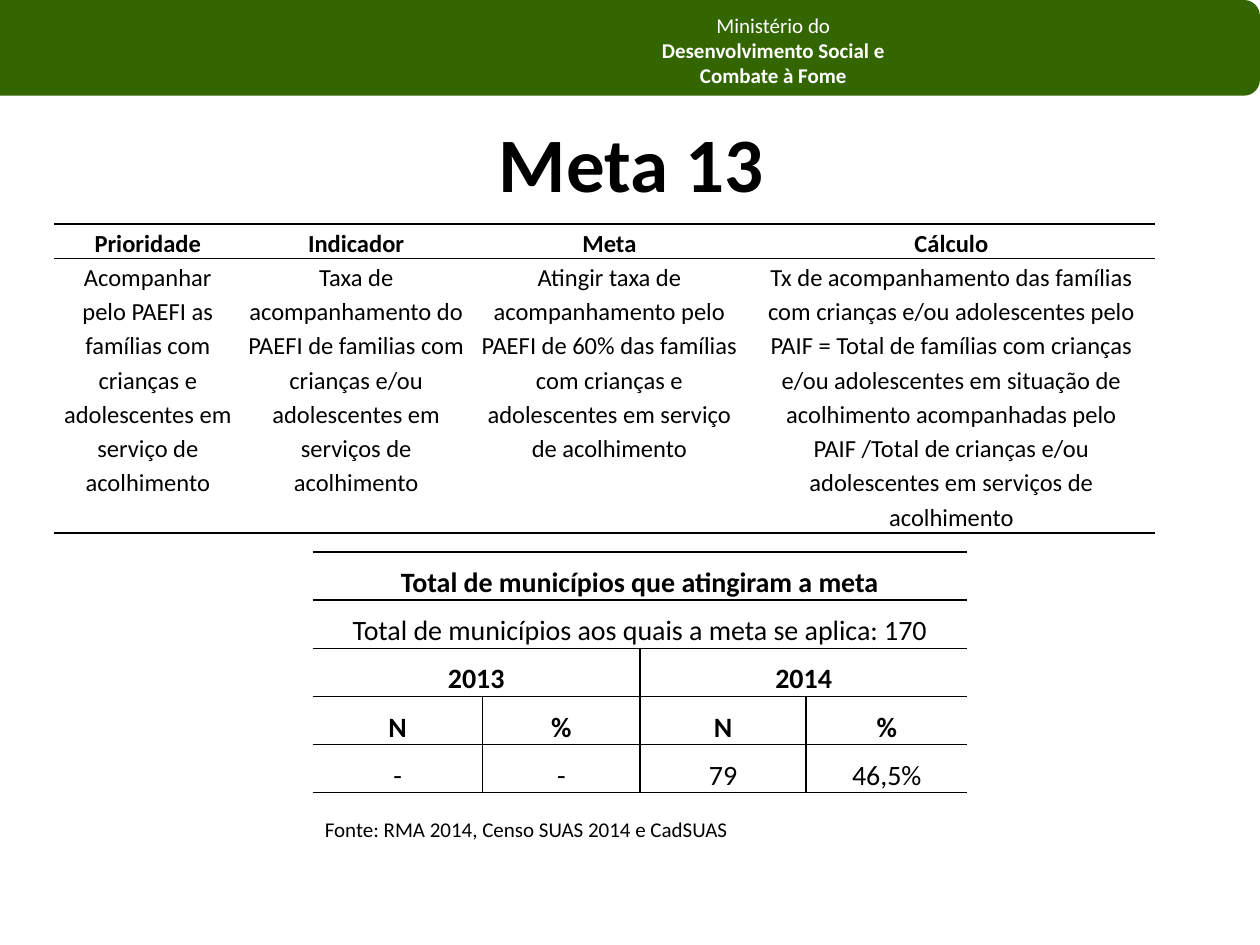
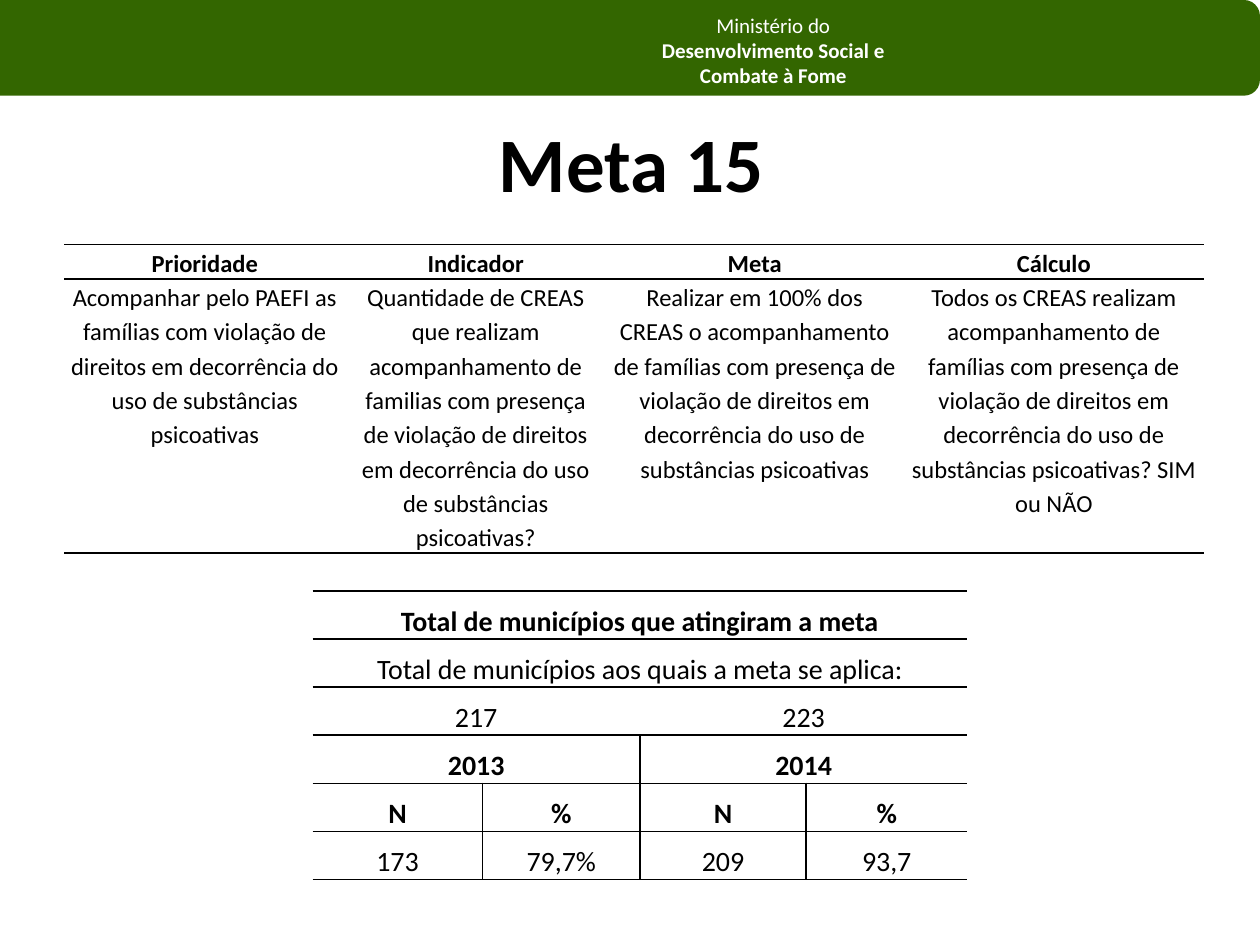
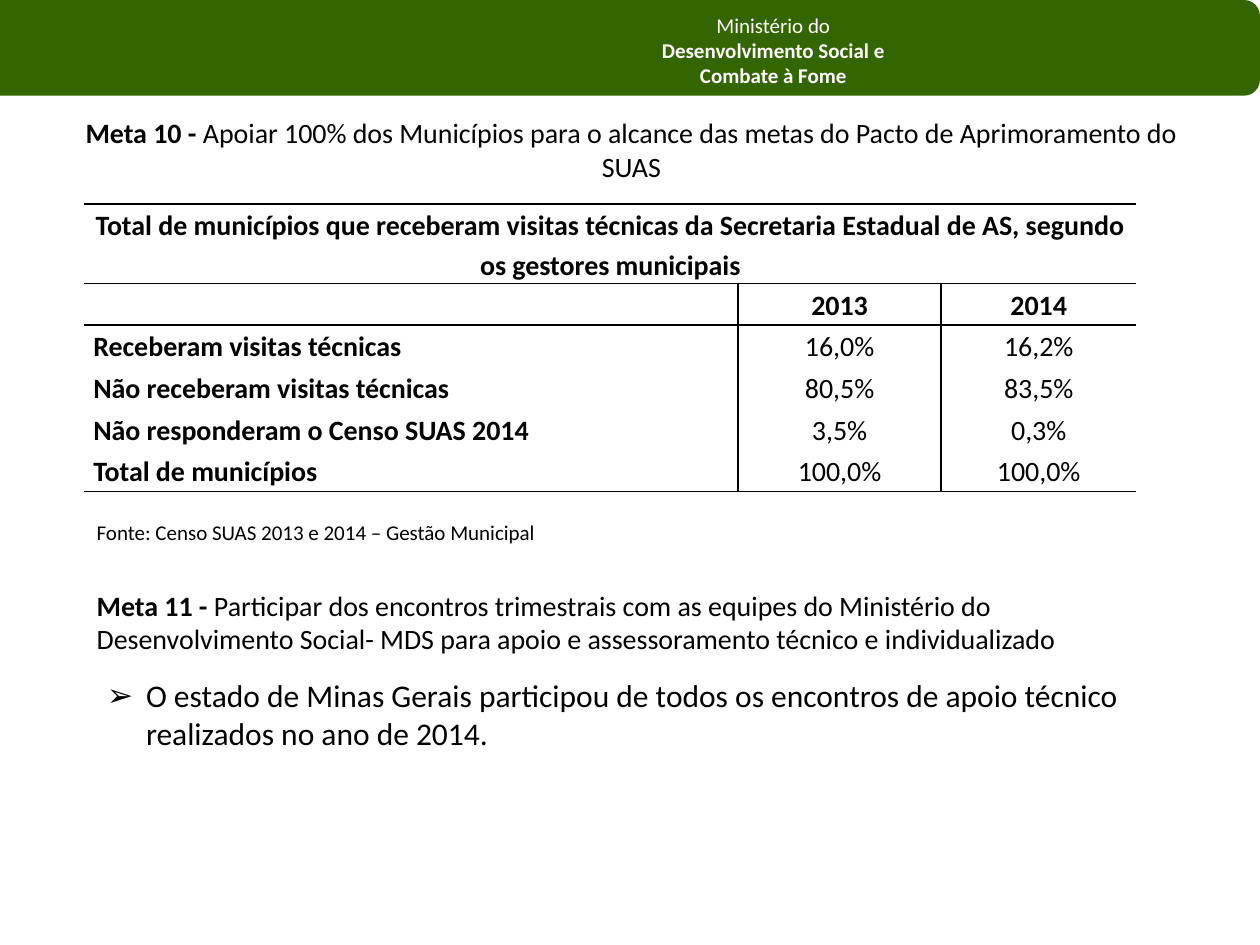
from lxml import etree
from pptx import Presentation
from pptx.dml.color import RGBColor
from pptx.enum import shapes, text
from pptx.oxml import ns
from pptx.util import Cm, Pt

COLORS = {"band": "336600", "ink": "000000", "white": "FFFFFF"}
FONT = "Calibri"
CENTER, LEFT = text.PP_ALIGN.CENTER, text.PP_ALIGN.LEFT
TITLE_ONLY, TITLE_AND_BODY = 5, 1

GOAL_HEADER = ["Prioridade", "Indicador", "Meta", "Cálculo"]
REACHED = ["Total de municípios que atingiram a meta", None, None, None]
YEARS = ["2013", None, "2014", None]
MEASURES = ["N", "%", "N", "%"]


def rgb(name):
    return RGBColor.from_string(COLORS[name])


def format_paragraph(paragraph, size, bold=None, color="ink", align=LEFT):
    paragraph.alignment = align
    font = paragraph.font
    font.name, font.size, font.bold = FONT, Pt(size), bold
    font.color.rgb = rgb(color)


def add_runs(paragraph, *runs):
    """Each run is a (wording, bold) pair."""
    for wording, bold in runs:
        run = paragraph.add_run()
        run.text = wording
        run.font.bold = bold


def place(shape, left, top, width, height):
    shape.left, shape.top = Cm(left), Cm(top)
    shape.width, shape.height = Cm(width), Cm(height)


def add_box(slide, left, top, width, height, wrap=True):
    box = slide.shapes.add_textbox(Cm(left), Cm(top), Cm(width), Cm(height))
    frame = box.text_frame
    frame.word_wrap = wrap
    frame.auto_size = text.MSO_AUTO_SIZE.SHAPE_TO_FIT_TEXT
    return box


# Header shared by all slides, kept on the master
def add_master_header(prs, slide):
    band = slide.shapes.add_shape(shapes.MSO_SHAPE.ROUNDED_RECTANGLE,
                                  Cm(-0.51), Cm(0), Cm(25.91), Cm(1.93))
    band.shadow.inherit = False
    band.fill.solid()
    band.fill.fore_color.rgb = rgb("band")
    band.line.fill.background()

    ministry = add_box(slide, 12.29, 0.13, 6.6, 1.8)
    frame = ministry.text_frame
    lines = ["Ministério do", "Desenvolvimento Social e", "Combate à Fome"]
    frame.text = "\n".join(lines)
    for i, paragraph in enumerate(frame.paragraphs):
        format_paragraph(paragraph, 12, i > 0, "white", CENTER)

    for depth, part in enumerate((band, ministry), start=2):
        prs.slide_master.shapes.element.insert(depth, part.element)


def set_title(slide, top, margin_top, size, *runs):
    title = slide.shapes.title
    place(title, 1.3, top, 22.86, 3.18)
    frame = title.text_frame
    frame.auto_size = text.MSO_AUTO_SIZE.NONE
    frame.vertical_anchor = text.MSO_ANCHOR.TOP
    frame.margin_top = Cm(margin_top)
    format_paragraph(frame.paragraphs[0], size, align=CENTER)
    add_runs(frame.paragraphs[0], *runs)


def add_source(slide, left, top, width, wording):
    paragraph = add_box(slide, left, top, width, 0.76, False).text_frame.paragraphs[0]
    paragraph.text = wording
    format_paragraph(paragraph, 12)


# Tables
def set_borders(cell, **visible):
    properties = cell._tc.get_or_add_tcPr()
    for side in "LRTB":
        line = etree.SubElement(properties, ns.qn(f"a:ln{side}"), w=str(Pt(1)))
        if visible[side]:
            fill = etree.SubElement(line, ns.qn("a:solidFill"))
            etree.SubElement(fill, ns.qn("a:srgbClr"), val=COLORS["ink"])
        else:
            etree.SubElement(line, ns.qn("a:noFill"))


def add_ruled_table(slide, left, top, widths, heights, rows, size, bold_rows,
                    ruled_rows, split_from, margin=0.13, labels=False):
    """None in rows joins a cell to the one on its left; columns are
    separated by lines from row split_from on; labels mark the first column."""
    table = slide.shapes.add_table(
        len(rows), len(widths), Cm(left), Cm(top),
        Cm(sum(widths)), Cm(sum(heights))).table
    table.first_row = table.horz_banding = False
    for column, width in zip(table.columns, widths):
        column.width = Cm(width)
    for row, height in zip(table.rows, heights):
        row.height = Cm(height)

    for r, values in enumerate(rows):
        starts = [c for c, value in enumerate(values) if value is not None]
        ends = [c - 1 for c in starts[1:]] + [len(widths) - 1]
        for start, end in zip(starts, ends):
            if end > start:
                table.cell(r, start).merge(table.cell(r, end))
            split = r >= split_from
            for c in range(start, end + 1):
                cell = table.cell(r, c)
                set_borders(cell, L=split and c == start > 0,
                            R=split and end < len(widths) - 1,
                            T=r == 0 or r - 1 in ruled_rows, B=r in ruled_rows)
                cell.fill.background()
                cell.margin_left = cell.margin_right = Cm(margin)
                cell.margin_top = cell.margin_bottom = 0
            cell = table.cell(r, start)
            is_label = labels and start == 0 and r not in bold_rows
            paragraph = cell.text_frame.paragraphs[0]
            paragraph.text = values[start]
            paragraph.line_spacing = 1.15
            format_paragraph(paragraph, size, is_label or r in bold_rows,
                             align=LEFT if is_label else CENTER)
    return table


def anchor_bottom(table, row_numbers):
    for r in row_numbers:
        for cell in table.rows[r].cells:
            cell.vertical_anchor = text.MSO_ANCHOR.BOTTOM


def add_goal_table(slide, left, top, widths, goal):
    table = add_ruled_table(slide, left, top, widths, [0.51, 4.65],
                            [GOAL_HEADER, goal], 14, {0}, {0, 1}, 2)
    anchor_bottom(table, [0])
    for cell in table.rows[1].cells:
        cell.text_frame.paragraphs[0].space_after = Pt(10)


def add_result_table(slide, top, applicable, results):
    rows = [REACHED, *applicable, YEARS, MEASURES, results]
    years = rows.index(YEARS)
    table = add_ruled_table(slide, 6.3, top, [3.43, 3.17, 3.35, 3.25],
                            [0.97] * len(rows), rows, 16, {0, years, years + 1},
                            range(len(rows)), years)
    anchor_bottom(table, range(len(rows)))


# List
def fill_list(slide, wording):
    body = slide.placeholders[1]
    place(body, 1.9, 13.51, 21.01, 1.8)
    body.text_frame.auto_size = text.MSO_AUTO_SIZE.NONE
    paragraph = body.text_frame.paragraphs[0]
    paragraph.text = wording
    paragraph.space_before = 0
    properties = paragraph._p.get_or_add_pPr()
    properties.set("marL", str(Cm(0.79)))
    properties.set("indent", str(-Cm(0.79)))
    etree.SubElement(properties, ns.qn("a:buChar"), char="➢")
    format_paragraph(paragraph, 18)


def main():
    prs = Presentation()
    prs.slide_width, prs.slide_height = Cm(25.4), Cm(19.05)
    meta13, meta15, meta10 = [
        prs.slides.add_slide(prs.slide_layouts[layout])
        for layout in (TITLE_ONLY, TITLE_ONLY, TITLE_AND_BODY)]
    add_master_header(prs, meta13)

    # Meta 13
    set_title(meta13, 2.13, 0.2, 44, ("Meta 13", True))
    add_goal_table(meta13, 1.09, 4.52, [3.78, 4.62, 5.59, 8.2], [
        "Acompanhar pelo PAEFI as famílias com crianças e adolescentes em "
        "serviço de acolhimento",
        "Taxa de acompanhamento do PAEFI de familias com crianças e/ou "
        "adolescentes em serviços de acolhimento",
        "Atingir taxa de acompanhamento pelo PAEFI de 60% das famílias com "
        "crianças e adolescentes em serviço de acolhimento",
        "Tx de acompanhamento das famílias com crianças e/ou adolescentes pelo "
        "PAIF = Total de famílias com crianças e/ou adolescentes em situação de "
        "acolhimento acompanhadas pelo PAIF /Total de crianças e/ou "
        "adolescentes em serviços de acolhimento"])
    add_result_table(
        meta13, 11.13,
        [["Total de municípios aos quais a meta se aplica: 170", None, None, None]],
        ["-", "-", "79", "46,5%"])
    add_source(meta13, 6.3, 16.33, 8.81,
               "Fonte: RMA 2014, Censo SUAS 2014 e CadSUAS")

    # Meta 15
    set_title(meta15, 2.13, 0.2, 44, ("Meta 15", True))
    add_goal_table(meta15, 1.3, 4.93, [5.66, 5.26, 5.99, 6.07], [
        "Acompanhar pelo PAEFI as famílias com violação de direitos em "
        "decorrência do uso de substâncias psicoativas",
        "Quantidade de CREAS que realizam acompanhamento de familias com "
        "presença de violação de direitos em decorrência do uso de substâncias "
        "psicoativas?",
        "Realizar em 100% dos CREAS o acompanhamento de famílias com presença "
        "de violação de direitos em decorrência do uso de substâncias "
        "psicoativas",
        "Todos os CREAS realizam acompanhamento de famílias com presença de "
        "violação de direitos em decorrência do uso de substâncias "
        "psicoativas? SIM ou NÃO"])
    add_result_table(
        meta15, 11.91,
        [["Total de municípios aos quais a meta se aplica:", None, None, None],
         ["217", None, "223", None]],
        ["173", "79,7%", "209", "93,7"])

    # Metas 10 and 11
    set_title(meta10, 1.52, 0.81, 16, ("Meta 10 -", True),
              (" Apoiar 100% dos Municípios para o alcance das metas do Pacto de "
               "Aprimoramento do SUAS", False))
    visits = [
        ["Total de municípios que receberam visitas técnicas da Secretaria "
         "Estadual de AS, segundo os gestores municipais", None, None],
        ["", "2013", "2014"],
        ["Receberam visitas técnicas", "16,0%", "16,2%"],
        ["Não receberam visitas técnicas", "80,5%", "83,5%"],
        ["Não responderam o Censo SUAS 2014", "3,5%", "0,3%"],
        ["Total de municípios", "100,0%", "100,0%"]]
    add_ruled_table(meta10, 1.7, 4.11, [13.18, 4.09, 3.94], [1.6] + [0.84] * 5,
                    visits, 16, {0, 1}, {0, 1, 5}, 1, margin=0.18, labels=True)
    add_source(meta10, 1.7, 10.34, 9.47,
               "Fonte: Censo SUAS 2013 e 2014 – Gestão Municipal")
    meta11 = add_box(meta10, 1.7, 11.73, 21.21, 2.39).text_frame.paragraphs[0]
    format_paragraph(meta11, 16)
    add_runs(meta11, ("Meta 11 -", True),
             (" Participar dos encontros trimestrais com as equipes do Ministério "
              "do Desenvolvimento Social- MDS para apoio e assessoramento técnico "
              "e individualizado", False))
    fill_list(meta10, "O estado de Minas Gerais participou de todos os encontros "
                      "de apoio técnico realizados no ano de 2014.")

    prs.save("out.pptx")


if __name__ == "__main__":
    main()
